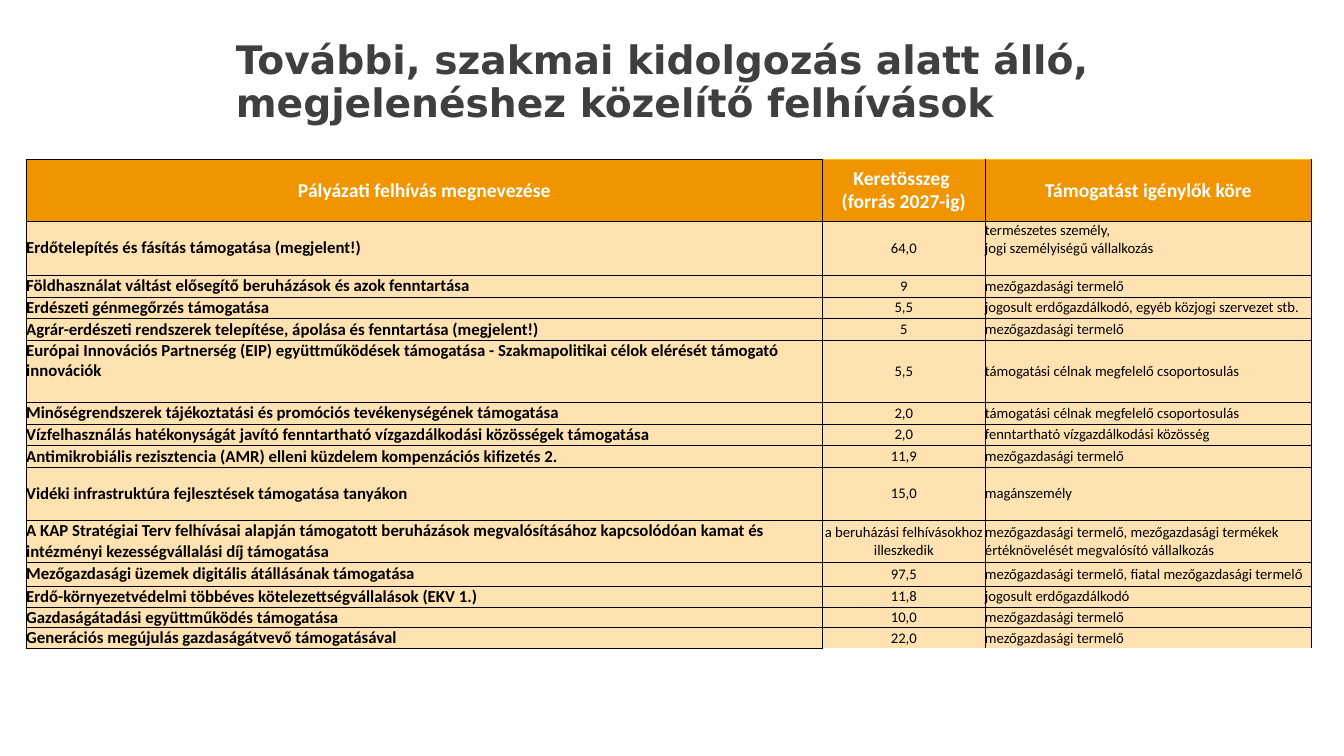
from dataclasses import dataclass
from typing import Optional

from lxml.etree import SubElement
from pptx import Presentation
from pptx.dml.color import RGBColor
from pptx.enum.text import MSO_ANCHOR, PP_ALIGN
from pptx.oxml.ns import qn
from pptx.util import Emu, Inches, Pt

WIDTH, HEIGHT = Inches(13.33), Inches(7.5)


# Colours, fonts and type sizes
@dataclass(frozen=True)
class Theme:
    dark: str = "3F3F3F"
    white: str = "FFFFFF"
    black: str = "000000"
    head: str = "F09500"
    body: str = "FFE2B2"
    gold: str = "FFC000"
    title: float = 28
    label: float = 14
    name: float = 12
    small: float = 10.5
    sans: str = "DejaVu Sans"
    text: str = "Calibri"


THEME = Theme()


@dataclass(frozen=True)
class Style:
    size: float
    color: str
    bold: bool = False
    align: PP_ALIGN = PP_ALIGN.LEFT
    font: str = THEME.text


@dataclass(frozen=True)
class Call:
    name: str
    sum: str
    who: str
    share: float = 2.87  # row height, percent of the slide
    top: Optional[int] = None  # column whose text sits at the top


MID = PP_ALIGN.CENTER
LABEL = Style(THEME.label, THEME.white, True, MID)
TITLE = Style(THEME.title, THEME.dark, True, font=THEME.sans)
STYLES = (
    Style(THEME.name, THEME.black, True),
    Style(THEME.small, THEME.black, False, MID),
    Style(THEME.small, THEME.black),
)
COLS = (59.26, 12.08, 24.31)  # percent of the slide width

FARMER = "mezőgazdasági termelő"
GROUP = "támogatási célnak megfelelő csoportosulás"
CALLS = (
    Call("Pályázati felhívás megnevezése", "Keretösszeg \n(forrás 2027-ig)",
         "Támogatást igénylők köre", 8.2),
    Call("Erdőtelepítés és fásítás támogatása (megjelent!)", "64,0",
         "természetes személy,\vjogi személyiségű vállalkozás", 7.14, 2),
    Call("Földhasználat váltást elősegítő beruházások és azok fenntartása", "9", FARMER),
    Call("Erdészeti génmegőrzés támogatása", "5,5",
         "jogosult erdőgazdálkodó, egyéb közjogi szervezet stb."),
    Call("Agrár-erdészeti rendszerek telepítése, ápolása és fenntartása (megjelent!)",
         "5", FARMER),
    Call("Európai Innovációs Partnerség (EIP) együttműködések támogatása - "
         "Szakmapolitikai célok elérését támogató innovációk", "5,5", GROUP, 8.2, 0),
    Call("Minőségrendszerek tájékoztatási és promóciós tevékenységének támogatása",
         "2,0", GROUP),
    Call("Vízfelhasználás hatékonyságát javító fenntartható vízgazdálkodási "
         "közösségek támogatása", "2,0", "fenntartható vízgazdálkodási közösség"),
    Call("Antimikrobiális rezisztencia (AMR) elleni küzdelem kompenzációs kifizetés 2.",
         "11,9", FARMER),
    Call("Vidéki infrastruktúra fejlesztések támogatása tanyákon", "15,0",
         "magánszemély", 7.01),
    Call("A KAP Stratégiai Terv felhívásai alapján támogatott beruházások "
         "megvalósításához kapcsolódóan kamat és intézményi kezességvállalási díj "
         "támogatása", "a beruházási felhívásokhoz illeszkedik",
         "mezőgazdasági termelő, mezőgazdasági termékek értéknövelését megvalósító "
         "vállalkozás", 5.56),
    Call("Mezőgazdasági üzemek digitális átállásának támogatása", "97,5",
         "mezőgazdasági termelő, fiatal mezőgazdasági termelő", 3.17),
    Call("Erdő-környezetvédelmi többéves kötelezettségvállalások (EKV 1.)", "11,8",
         "jogosult erdőgazdálkodó", 2.75),
    Call("Gazdaságátadási együttműködés támogatása", "10,0", FARMER, 2.75),
    Call("Generációs megújulás gazdaságátvevő támogatásával", "22,0", FARMER, 2.75),
)


def across(share: float) -> Emu:
    return Emu(round(WIDTH * share / 100))


def down(share: float) -> Emu:
    return Emu(round(HEIGHT * share / 100))


def write(frame, text: str, style: Style) -> None:
    frame.text = text
    look = {"size": Pt(style.size), "bold": style.bold, "name": style.font}
    for para in frame.paragraphs:
        para.alignment = style.align
        for run in para.runs:
            for key, value in look.items():
                setattr(run.font, key, value)
            run.font.color.rgb = RGBColor.from_string(style.color)


def edge(cell, side: str, color: Optional[str], width: float) -> None:
    line = SubElement(cell._tc.get_or_add_tcPr(), qn(f"a:ln{side}"), w=str(Pt(width)))
    if color is None:
        SubElement(line, qn("a:noFill"))
    else:
        fill = SubElement(line, qn("a:solidFill"))
        SubElement(fill, qn("a:srgbClr"), val=color)


def draw_cell(cell, row: int, col: int, call: Call) -> None:
    first, last = row == 0, row == len(CALLS) - 1
    anchor = MSO_ANCHOR.TOP if call.top == col else MSO_ANCHOR.MIDDLE
    form = {"margin_left": 0, "margin_right": 0, "margin_top": 0,
            "margin_bottom": 0, "vertical_anchor": anchor}
    for key, value in form.items():
        setattr(cell, key, value)
    write(cell.text_frame, (call.name, call.sum, call.who)[col],
          LABEL if first else STYLES[col])

    # Borders come before the fill in the cell's XML
    for side in "LRTB":
        color, width = THEME.black, 0.5
        if col and first and side == "T":
            color, width = THEME.gold, 1
        elif col and last and side == "B":
            color = None
        edge(cell, side, color, width)
    cell.fill.solid()
    cell.fill.fore_color.rgb = RGBColor.from_string(THEME.head if first else THEME.body)


def draw_title(slide) -> None:
    box = slide.shapes.add_textbox(across(17.18), down(3.07), across(82.07), down(15.87))
    frame = box.text_frame
    pad = Inches(0.05)
    form = {"word_wrap": True, "vertical_anchor": MSO_ANCHOR.MIDDLE,
            "margin_left": pad, "margin_right": pad,
            "margin_top": pad, "margin_bottom": pad}
    for key, value in form.items():
        setattr(frame, key, value)
    write(frame, "További, szakmai kidolgozás alatt álló, "
                 "megjelenéshez közelítő felhívások", TITLE)
    frame.paragraphs[0].line_spacing = 0.9


def draw_table(slide) -> None:
    tall = sum(call.share for call in CALLS)
    grid = slide.shapes.add_table(len(CALLS), len(COLS), across(1.95), down(21.07),
                                  across(sum(COLS)), down(tall)).table
    grid.first_row = grid.horz_banding = False
    for col, share in enumerate(COLS):
        grid.columns[col].width = across(share)
    for row, call in enumerate(CALLS):
        grid.rows[row].height = down(call.share)
        for col in range(len(COLS)):
            draw_cell(grid.cell(row, col), row, col, call)


def main() -> None:
    deck = Presentation()
    deck.slide_width, deck.slide_height = WIDTH, HEIGHT
    slide = deck.slides.add_slide(deck.slide_layouts[6])
    draw_title(slide)
    draw_table(slide)
    deck.save("out.pptx")


if __name__ == "__main__":
    main()
